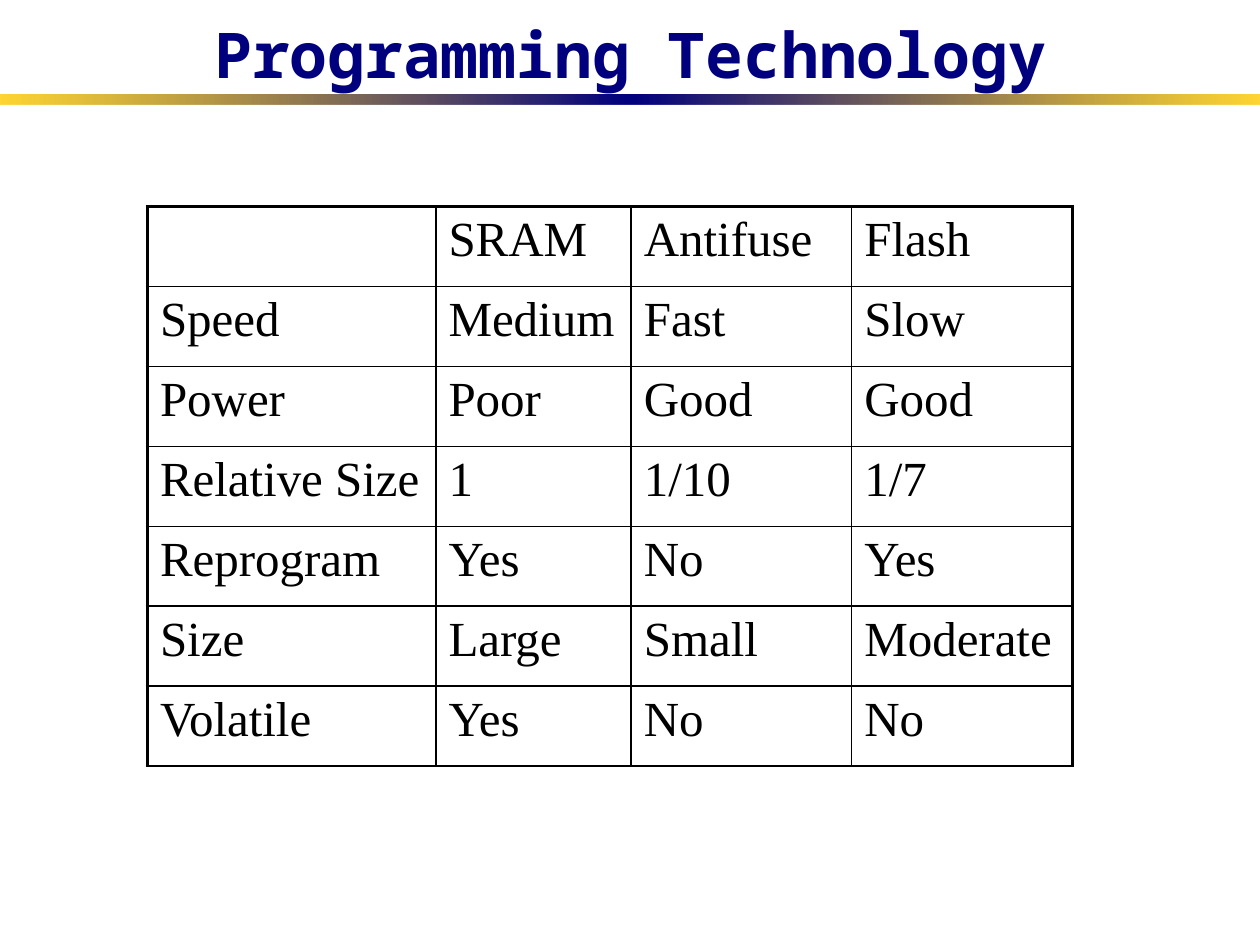
"""Build the Programming Technology comparison slide."""
from pptx import Presentation
from pptx.dml.color import RGBColor
from pptx.enum.shapes import MSO_SHAPE
from pptx.enum.text import MSO_ANCHOR, MSO_AUTO_SIZE, PP_ALIGN
from pptx.oxml import parse_xml
from pptx.oxml.ns import nsdecls
from pptx.util import Inches, Pt

COLORS = {"navy": "00007F", "gold": "FFCC00", "ink": "000000"}
ROWS = [
    ["", "SRAM", "Antifuse", "Flash"],
    ["Speed", "Medium", "Fast", "Slow"],
    ["Power", "Poor", "Good", "Good"],
    ["Relative Size", "1", "1/10", "1/7"],
    ["Reprogram", "Yes", "No", "Yes"],
    ["Size", "Large", "Small", "Moderate"],
    ["Volatile", "Yes", "No", "No"],
]
COL_WIDTHS = [2.29, 1.55, 1.75, 1.75]
THIN, THICK = Pt(1), Pt(2.25)


def set_font(p, name, size, color, bold=False):
    p.font.name = name
    p.font.size = Pt(size)
    p.font.bold = bold
    p.font.color.rgb = RGBColor.from_string(COLORS[color])


def add_border(cell, side, width):
    cell._tc.get_or_add_tcPr().append(parse_xml(
        f'<a:ln{side} {nsdecls("a")} w="{width}"><a:solidFill>'
        f'<a:srgbClr val="{COLORS["ink"]}"/></a:solidFill></a:ln{side}>'))


prs = Presentation()
prs.slide_width, prs.slide_height = Inches(10), Inches(7.5)
W, H = prs.slide_width, prs.slide_height
s = prs.slides.add_slide(prs.slide_layouts[5])

bar = s.shapes.add_shape(MSO_SHAPE.RECTANGLE, 0, H // 10, W, Inches(0.08))
bar.shadow.inherit = False
bar.line.fill.background()
gold = f'<a:srgbClr val="{COLORS["gold"]}"><a:alpha val="80000"/></a:srgbClr>'
navy = f'<a:srgbClr val="{COLORS["navy"]}"/>'
stops = "".join(f'<a:gs pos="{pos}">{color}</a:gs>'
                for pos, color in [(0, gold), (50000, navy), (100000, gold)])
bar._element.spPr.insert(2, parse_xml(
    f'<a:gradFill {nsdecls("a")} rotWithShape="1"><a:gsLst>{stops}</a:gsLst>'
    '<a:lin ang="0" scaled="1"/></a:gradFill>'))
s.shapes._spTree.insert(2, bar._element)

title = s.shapes.title
title.left, title.top = W // 40, 0
title.width, title.height = W - W // 20, Inches(0.77)
tf = title.text_frame
tf.text = "Programming Technology"
tf.auto_size = MSO_AUTO_SIZE.NONE
tf.vertical_anchor = MSO_ANCHOR.BOTTOM
p = tf.paragraphs[0]
p.alignment = PP_ALIGN.CENTER
set_font(p, "Noto Sans Mono", 36, "navy", bold=True)

row_h = Inches(4.44) // len(ROWS)
table = s.shapes.add_table(len(ROWS), len(COL_WIDTHS), Inches(1.17), Inches(1.64),
                           Inches(sum(COL_WIDTHS)), row_h * len(ROWS)).table
table.first_row = table.horz_banding = False
for col, width in zip(table.columns, COL_WIDTHS):
    col.width = Inches(width)
for i, row in enumerate(ROWS):
    table.rows[i].height = row_h
    for j, text in enumerate(row):
        cell = table.cell(i, j)
        cell.text = text
        set_font(cell.text_frame.paragraphs[0], "Times New Roman", 28, "ink")
        add_border(cell, "L", THICK if j == 0 else THIN)
        add_border(cell, "R", THICK if j == len(row) - 1 else THIN)
        add_border(cell, "T", THICK if i == 0 else THIN)
        add_border(cell, "B", THIN)
        cell.fill.background()

prs.save("out.pptx")
